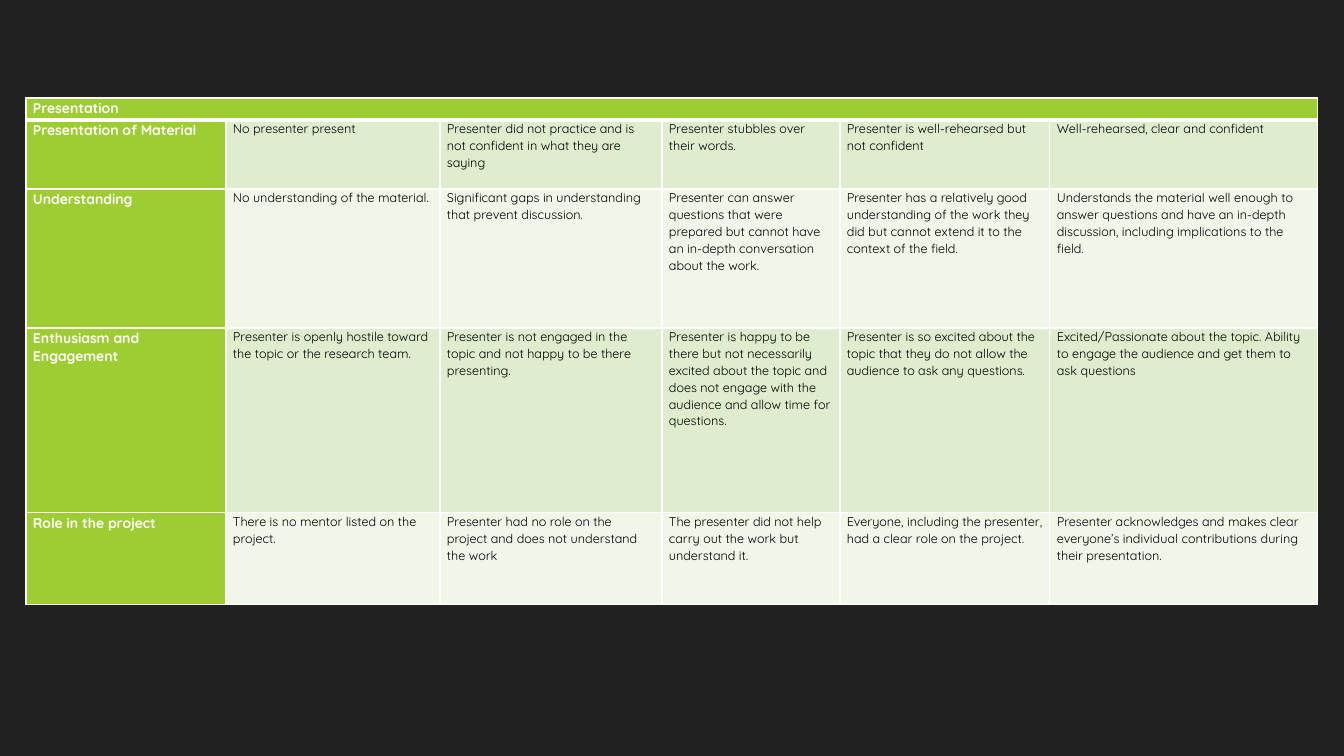
import lxml.etree
import pptx
import pptx.dml.color
import pptx.oxml.ns
import pptx.util

SCALE = 914400 / 100.8  # EMU in one px
FONT = "Quicksand"
GREEN, WHITE, BLACK, DARK = "9ECD33", "FFFFFF", "000000", "212121"
BANDS = ["DFEDCE", "F0F6E8"]
COLS = [200, 214, 222, 178, 210, 268]
ROWS = [22, 69, 139, 185, 92]
HEAD = "Presentation"
RUBRIC = [
    ["Presentation of Material",
     "No presenter present",
     "Presenter did not practice and is not confident in what they are saying",
     "Presenter stubbles over their words.",
     "Presenter is well-rehearsed but not confident",
     "Well-rehearsed, clear and confident"],
    ["Understanding",
     "No understanding of the material.",
     "Significant gaps in understanding that prevent discussion.",
     "Presenter can answer questions that were prepared but cannot have "
     "an in-depth conversation about the work.",
     "Presenter has a relatively good understanding of the work they did "
     "but cannot extend it to the context of the field.",
     "Understands the material well enough to answer questions and have an "
     "in-depth discussion, including implications to the field."],
    ["Enthusiasm and Engagement",
     "Presenter is openly hostile toward the topic or the research team.",
     "Presenter is not engaged in the topic and not happy to be there presenting.",
     "Presenter is happy to be there but not necessarily excited about the topic "
     "and does not engage with the audience and allow time for questions.",
     "Presenter is so excited about the topic that they do not allow the "
     "audience to ask any questions.",
     "Excited/Passionate about the topic. Ability to engage the audience "
     "and get them to ask questions"],
    ["Role in the project",
     "There is no mentor listed on the project.",
     "Presenter had no role on the project and does not understand the work",
     "The presenter did not help carry out the work but understand it.",
     "Everyone, including the presenter, had a clear role on the project.",
     "Presenter acknowledges and makes clear everyone’s individual "
     "contributions during their presentation."],
]


def px(n):
    return pptx.util.Emu(round(n * SCALE))


def color(code):
    return pptx.dml.color.RGBColor.from_string(code)


def paint(fill, code):
    fill.solid()
    fill.fore_color.rgb = color(code)


def border(cell, top, bottom):
    """Draw white edges; top and bottom are widths in points."""
    qn = pptx.oxml.ns.qn
    props = cell._tc.get_or_add_tcPr()
    edges = {"L": 1, "R": 1, "T": top, "B": bottom}
    for i, (side, width) in enumerate(edges.items()):
        line = lxml.etree.Element(qn("a:ln" + side), w=str(pptx.util.Pt(width)))
        fill = lxml.etree.SubElement(line, qn("a:solidFill"))
        lxml.etree.SubElement(fill, qn("a:srgbClr"), val=WHITE)
        props.insert(i, line)


def write(cell, text, label):
    cell.text_frame.text = text
    para = cell.text_frame.paragraphs[0]
    para.line_spacing = 1.07
    for run in para.runs:
        run.font.name = FONT
        run.font.size = pptx.util.Pt(10 if label else 9)
        run.font.bold = label
        run.font.color.rgb = color(WHITE if label else BLACK)


def add_grid(slide, left, top):
    frame = slide.shapes.add_table(len(ROWS), len(COLS), px(left), px(top),
                                   px(sum(COLS)), px(sum(ROWS)))
    table = frame.table
    for col, width in zip(table.columns, COLS):
        col.width = px(width)
    for row, height in zip(table.rows, ROWS):
        row.height = px(height)
    table.cell(0, 0).merge(table.cell(0, len(COLS) - 1))
    texts = [[HEAD] + [""] * (len(COLS) - 1)] + RUBRIC
    for r, line in enumerate(texts):
        for c, text in enumerate(line):
            cell = table.cell(r, c)
            label = r == 0 or c == 0
            cell.margin_left = cell.margin_right = px(7)
            cell.margin_top = cell.margin_bottom = 0
            paint(cell.fill, GREEN if label else BANDS[(r - 1) % 2])
            border(cell, 3 if r == 1 else 1, 3 if r == 0 else 1)
            write(cell, text, label)


def main():
    deck = pptx.Presentation()
    deck.slide_width, deck.slide_height = px(1344), px(756)
    slide = deck.slides.add_slide(deck.slide_layouts[6])
    paint(slide.background.fill, DARK)
    add_grid(slide, 26, 98)
    deck.save("out.pptx")


if __name__ == "__main__":
    main()
